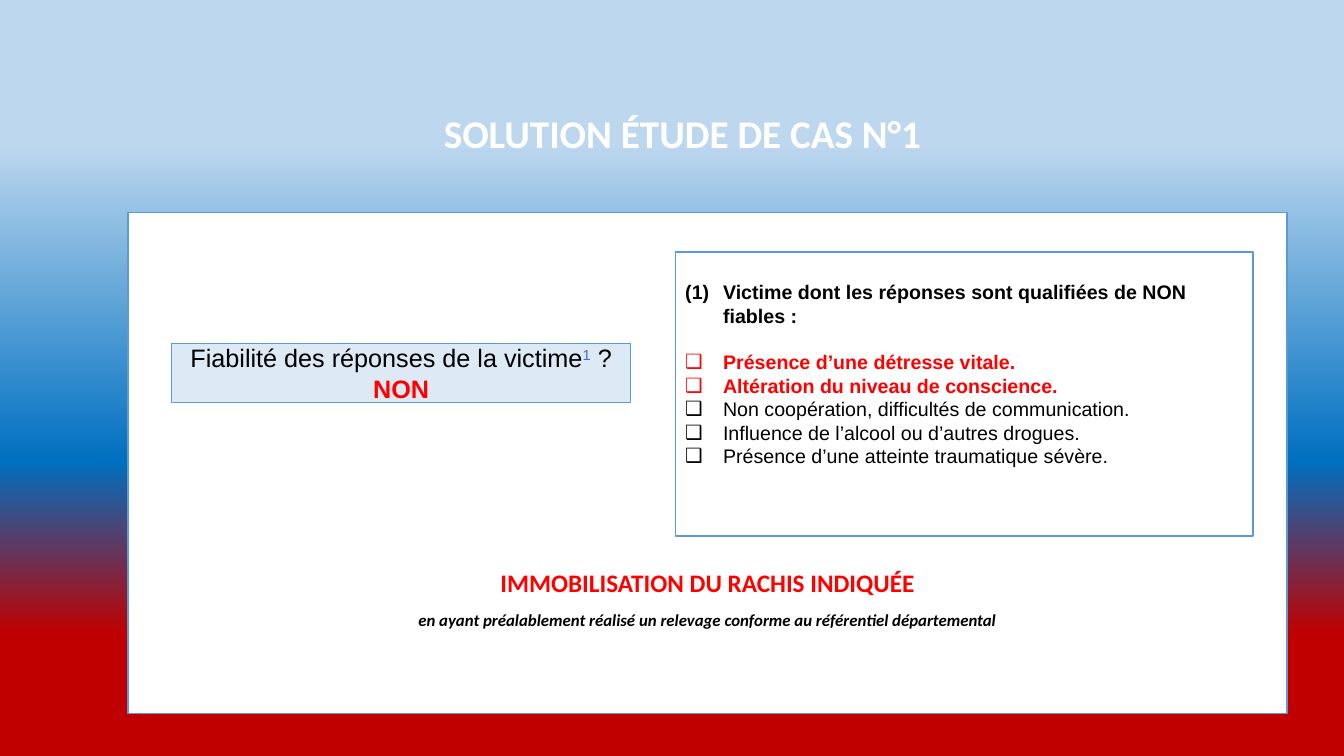
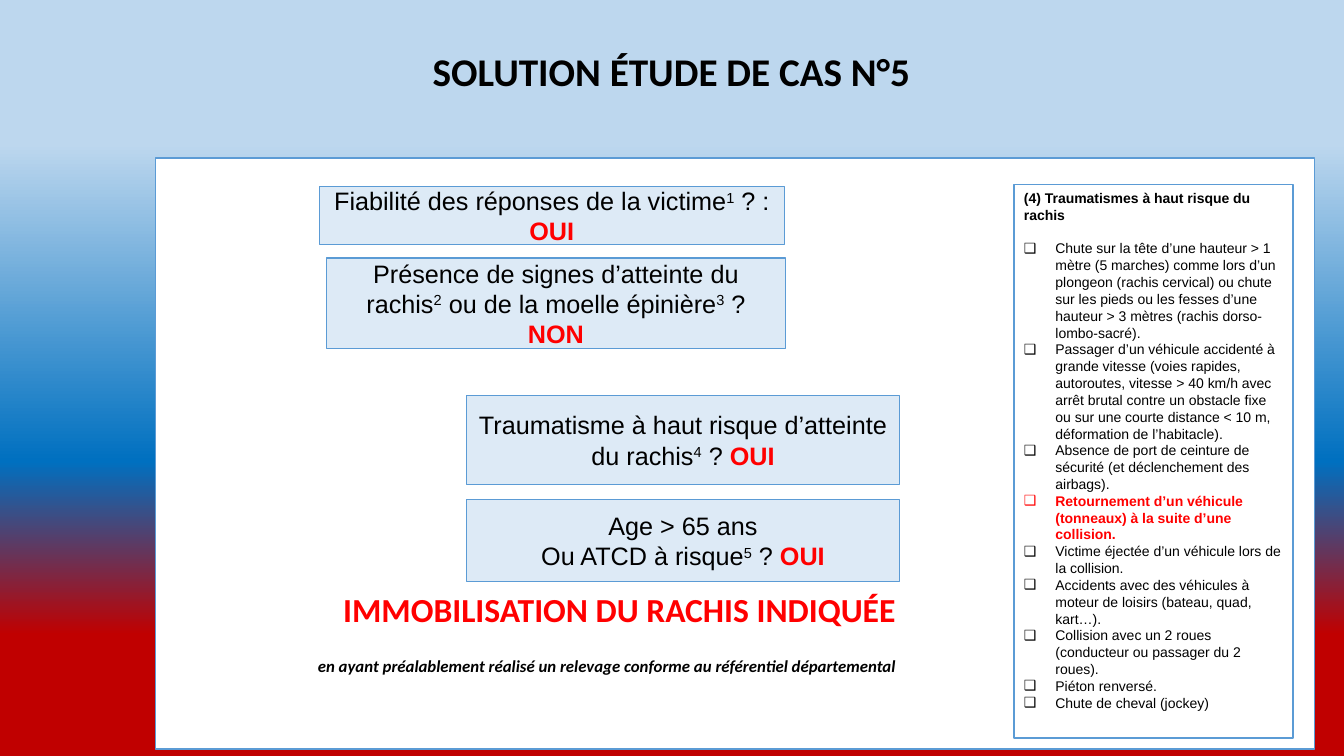
from copy import deepcopy

from lxml.etree import SubElement
from pptx import Presentation
from pptx.dml.color import RGBColor
from pptx.enum.shapes import MSO_SHAPE
from pptx.enum.text import MSO_ANCHOR, MSO_AUTO_SIZE, PP_ALIGN
from pptx.oxml.ns import qn
from pptx.util import Pt

WHITE = RGBColor(0xFF, 0xFF, 0xFF)
BLACK = RGBColor(0x00, 0x00, 0x00)
RED = RGBColor(0xFF, 0x00, 0x00)
ACCENT = RGBColor(0x5B, 0x9B, 0xD5)
PALE_BLUE = RGBColor(0xDD, 0xEA, 0xF6)
NOTE_BLUE = RGBColor(0x44, 0x72, 0xC4)
BACKGROUND = [
    (0.19, RGBColor(0xBD, 0xD7, 0xEE)),
    (0.61, RGBColor(0x00, 0x70, 0xC0)),
    (0.84, RGBColor(0xC0, 0x00, 0x00)),
]
HEADING_FONT = "Calibri"
TEXT_FONT = "Arial"

VERDICT = "IMMOBILISATION DU RACHIS INDIQUÉE"
CONDITION = "en ayant préalablement réalisé un relevage conforme au référentiel départemental"

UNRELIABLE = [
    ("Présence d’une détresse vitale.", True),
    ("Altération du niveau de conscience.", True),
    ("Non coopération, difficultés de communication.", False),
    ("Influence de l’alcool ou d’autres drogues.", False),
    ("Présence d’une atteinte traumatique sévère.", False),
]
HIGH_RISK = [
    ("Chute sur la tête d’une hauteur > 1 mètre (5 marches) comme lors d’un plongeon "
     "(rachis cervical) ou chute sur les pieds ou les fesses d’une hauteur > 3 mètres "
     "(rachis dorso-lombo-sacré).", False),
    ("Passager d’un véhicule accidenté à grande vitesse (voies rapides, autoroutes, "
     "vitesse > 40 km/h avec arrêt brutal contre un obstacle fixe ou sur une courte "
     "distance < 10 m, déformation de l’habitacle).", False),
    ("Absence de port de ceinture de sécurité (et déclenchement des airbags).", False),
    ("Retournement d’un véhicule (tonneaux) à la suite d’une collision.", True),
    ("Victime éjectée d’un véhicule lors de la collision.", False),
    ("Accidents avec des véhicules à moteur de loisirs (bateau, quad, kart…).", False),
    ("Collision avec un 2 roues (conducteur ou passager du 2 roues).", False),
    ("Piéton renversé.", False),
    ("Chute de cheval (jockey)", False),
]


def set_background(master):
    """Vertical gradient shared by every slide."""
    fill = master.background.fill
    fill.gradient()
    stops = master.element.find(".//" + qn("a:gsLst"))
    while len(stops) < len(BACKGROUND):
        stops.append(deepcopy(stops[0]))
    for stop, (position, color) in zip(fill.gradient_stops, BACKGROUND):
        stop.position = position
        stop.color.rgb = color
    fill.gradient_angle = 270


def place(shape, box):
    shape.left, shape.top, shape.width, shape.height = (Pt(value) for value in box)


def style_box(shape, fill, line_width):
    shape.fill.solid()
    shape.fill.fore_color.rgb = fill
    shape.line.color.rgb = ACCENT
    shape.line.width = Pt(line_width)


def add_box(page, box, fill, line_width):
    shape = page.shapes.add_shape(MSO_SHAPE.RECTANGLE, *(Pt(value) for value in box))
    shape.shadow.inherit = False
    style_box(shape, fill, line_width)
    shape.text_frame.word_wrap = True
    return shape


def add_span(para, text, size, font=TEXT_FONT, color=BLACK, bold=False, italic=False):
    span = para.add_run()
    span.text = text
    span.font.size = Pt(size)
    span.font.name = font
    span.font.color.rgb = color
    span.font.bold = bold
    span.font.italic = italic
    return span


def next_para(frame, first, align=PP_ALIGN.LEFT, before=0):
    para = frame.paragraphs[0] if first else frame.add_paragraph()
    para.alignment = align
    para.space_before = Pt(before)
    return para


def set_indent(para, left, hanging=0):
    properties = para._p.get_or_add_pPr()
    properties.set("marL", str(Pt(left)))
    properties.set("indent", str(-Pt(hanging)))
    return properties


def set_bullet(para, hanging, color, numbered=False):
    properties = set_indent(para, hanging, hanging)
    bullet_color = SubElement(properties, qn("a:buClr"))
    SubElement(bullet_color, qn("a:srgbClr")).set("val", str(color))
    SubElement(properties, qn("a:buFont")).set("typeface", TEXT_FONT)
    if numbered:
        SubElement(properties, qn("a:buAutoNum")).set("type", "arabicParenBoth")
    else:
        SubElement(properties, qn("a:buChar")).set("char", "❑")


def fill_title(page, box, text, color):
    title = page.shapes.title
    place(title, box)
    frame = title.text_frame
    frame.auto_size = MSO_AUTO_SIZE.NONE
    frame.vertical_anchor = MSO_ANCHOR.MIDDLE
    para = next_para(frame, True, PP_ALIGN.CENTER)
    para.line_spacing = 0.9
    add_span(para, text, 28, HEADING_FONT, color, bold=True)


def fill_panel(page, box, text_top, verdict_size, gap, indents=None):
    """White panel with the conclusion; without indents the lines are centred."""
    panel = page.placeholders[1]
    place(panel, box)
    style_box(panel, WHITE, 1)
    frame = panel.text_frame
    frame.auto_size = MSO_AUTO_SIZE.NONE
    frame.vertical_anchor = MSO_ANCHOR.TOP
    frame.margin_top = Pt(text_top)
    align = PP_ALIGN.LEFT if indents else PP_ALIGN.CENTER
    lines = [(VERDICT, verdict_size, RED, False), (CONDITION, 12, BLACK, True)]
    for number, (text, size, color, italic) in enumerate(lines):
        para = next_para(frame, number == 0, align, gap if number else 0)
        para.line_spacing = 0.9
        properties = set_indent(para, indents[number] if indents else 0)
        SubElement(properties, qn("a:buNone"))
        add_span(para, text, size, HEADING_FONT, color, True, italic)


def add_question(page, box, lines, answer, note_color=BLACK):
    """Question box; in each line, every second piece is a raised note number."""
    shape = add_box(page, box, PALE_BLUE, 0.75)
    frame = shape.text_frame
    frame.vertical_anchor = MSO_ANCHOR.MIDDLE
    for number, pieces in enumerate(lines):
        para = next_para(frame, number == 0, PP_ALIGN.CENTER)
        for index, text in enumerate(pieces):
            raised = index % 2 == 1
            span = add_span(para, text, 18, color=note_color if raised else BLACK)
            if raised:
                span._r.get_or_add_rPr().set("baseline", "30000")
    add_span(para, answer, 18, color=RED, bold=True)


def add_checklist(page, box, heading, items, size, hanging, gap, top=3.6, numbered=False):
    """Framed list with a bold heading; items that apply are red and bold."""
    frame = add_box(page, box, WHITE, 1).text_frame
    frame.vertical_anchor = MSO_ANCHOR.TOP
    frame.margin_top = Pt(top)
    para = next_para(frame, True)
    if numbered:
        set_bullet(para, hanging, BLACK, numbered=True)
    add_span(para, heading, size, bold=True)
    for number, (text, applies) in enumerate(items):
        color = RED if applies else BLACK
        para = next_para(frame, False, before=0 if number else gap)
        set_bullet(para, hanging, color)
        add_span(para, text, size, color=color, bold=applies)


def build_case_one(page):
    fill_title(page, (73.4, 75.6, 828, 42.5), "SOLUTION ÉTUDE DE CAS N°1", WHITE)
    fill_panel(page, (91.4, 152, 828, 357.8), 256, 18, 10)
    add_question(page, (122.4, 245.5, 328.3, 41.8),
                 [["Fiabilité des réponses de la victime", "1", " ? "]], "NON", NOTE_BLUE)
    add_checklist(page, (482.4, 180, 412.6, 203),
                  "Victime dont les réponses sont qualifiées de NON fiables :",
                  UNRELIABLE, 14, 27, 16.5, top=20, numbered=True)


def build_case_five(page):
    fill_title(page, (65.5, 33.8, 828, 37.4), "SOLUTION ÉTUDE DE CAS N°5", BLACK)
    fill_panel(page, (110.9, 113, 828, 422), 311, 24, 20, indents=(127, 109))
    questions = [
        ((228.2, 133.2, 332, 41.8),
         [["Fiabilité des réponses de la victime", "1", " ? : "]], "OUI"),
        ((233.3, 184.3, 327.6, 64.8),
         [["Présence de signes d’atteinte du rachis", "2",
           " ou de la moelle épinière", "3", " ? "]], "NON"),
        ((333.4, 282.2, 308.9, 64),
         [["Traumatisme à haut risque d’atteinte du rachis", "4", " ? "]], "OUI"),
        ((333.4, 357.1, 308.9, 58.3),
         [["Age > 65 ans"], ["Ou ATCD à risque", "5", " ? "]], "OUI"),
    ]
    for box, lines, answer in questions:
        add_question(page, box, lines, answer)
    add_checklist(page, (724.3, 131.8, 199.4, 395.3),
                  "(4) Traumatismes à haut risque du rachis", HIGH_RISK, 10, 22.5, 12)


def main():
    deck = Presentation()
    deck.slide_width, deck.slide_height = Pt(960), Pt(540)
    set_background(deck.slide_master)
    for build in (build_case_one, build_case_five):
        build(deck.slides.add_slide(deck.slide_layouts[1]))
    deck.save("out.pptx")


if __name__ == "__main__":
    main()
